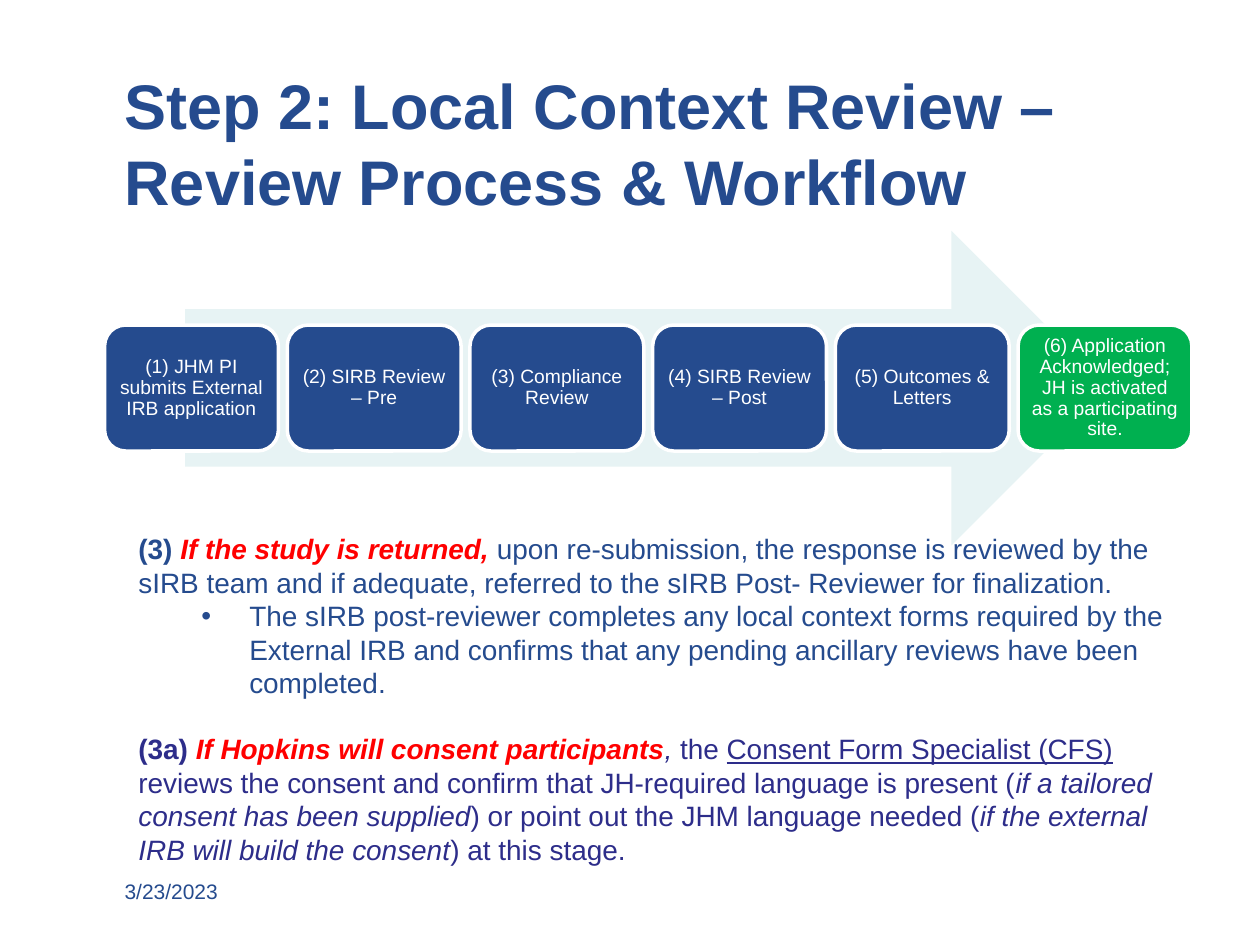
"""Builds the local context review slide with its six-step workflow."""
from typing import NamedTuple

from lxml.etree import SubElement
from pptx import Presentation
from pptx.dml.color import RGBColor
from pptx.enum.shapes import MSO_SHAPE
from pptx.enum.text import MSO_ANCHOR, PP_ALIGN
from pptx.oxml.ns import qn
from pptx.util import Inches, Pt

BLUE, INDIGO, RED, GREEN = "254B8E", "2D2D8A", "FF0000", "00B050"
WHITE, PALE = "FFFFFF", "E7F3F4"
FONT = "Arial"


class Step(NamedTuple):
    """One box of the workflow."""
    text: str
    fill: str = BLUE


class Part(NamedTuple):
    """A stretch of text in one style."""
    text: str
    color: str
    bold: bool = False
    slant: bool = False
    under: bool = False


STEPS = [
    Step("(1) JHM PI submits External IRB application"),
    Step("(2) SIRB Review – Pre"),
    Step("(3) Compliance Review"),
    Step("(4) SIRB Review – Post"),
    Step("(5) Outcomes & Letters"),
    Step("(6) Application Acknowledged; JH is activated as a participating site.", GREEN),
]

RETURN = [
    Part("(3) ", BLUE, bold=True),
    Part("If the study is returned, ", RED, bold=True, slant=True),
    Part("upon re-submission, the response is reviewed by the sIRB team and if "
         "adequate, referred to the sIRB Post- Reviewer for finalization.", BLUE),
]
DETAIL = [
    Part("The sIRB post-reviewer completes any local context forms required by the "
         "External IRB and confirms that any pending ancillary reviews have been "
         "completed.", BLUE),
]
CONSENT = [
    Part("(3a) ", INDIGO, bold=True),
    Part("If Hopkins will consent participants", RED, bold=True, slant=True),
    Part(", ", INDIGO, slant=True),
    Part("the ", INDIGO),
    Part("Consent Form Specialist (CFS) ", INDIGO, under=True),
    Part("reviews the consent and confirm that JH-required language is present (", INDIGO),
    Part("if a tailored consent has been supplied", INDIGO, slant=True),
    Part(") or point out the JHM language needed (", INDIGO),
    Part("if the external IRB will build the consent", INDIGO, slant=True),
    Part(") at this stage.", INDIGO),
]


def tint(color, code: str) -> None:
    """Set a colour from its hex string."""
    color.rgb = RGBColor.from_string(code)


def style(para, size: float, code: str, bold: bool = False) -> None:
    """Set the font of a whole paragraph."""
    font = para.font
    font.name, font.size, font.bold = FONT, Pt(size), bold
    tint(font.color, code)


def add_box(slide, left: float, top: float, width: float, height: float):
    """Add a wrapping text box and return its frame."""
    box = slide.shapes.add_textbox(Inches(left), Inches(top), Inches(width), Inches(height))
    box.text_frame.word_wrap = True
    return box.text_frame


def add_shape(slide, kind, left: float, top: float, width: float, height: float, fill: str):
    """Add a flat filled shape."""
    shape = slide.shapes.add_shape(
        kind, Inches(left), Inches(top), Inches(width), Inches(height))
    shape.shadow.inherit = False
    shape.fill.solid()
    tint(shape.fill.fore_color, fill)
    return shape


def add_step(slide, step: Step, left: float) -> None:
    """Draw one workflow box."""
    shape = add_shape(slide, MSO_SHAPE.ROUNDED_RECTANGLE, left, 2.58, 1.38, 1, step.fill)
    tint(shape.line.color, WHITE)
    shape.line.width = Pt(2)
    frame = shape.text_frame
    frame.word_wrap = True
    frame.vertical_anchor = MSO_ANCHOR.MIDDLE
    frame.margin_left = frame.margin_right = Inches(0.05)
    frame.margin_top = frame.margin_bottom = Inches(0.05)
    frame.text = step.text
    para = frame.paragraphs[0]
    para.alignment = PP_ALIGN.CENTER
    para.line_spacing = 0.9
    style(para, 11, WHITE)


def add_parts(para, parts: list[Part]) -> None:
    """Fill a paragraph with styled runs."""
    para.font.name, para.font.size = FONT, Pt(16)
    for part in parts:
        run = para.add_run()
        run.text = part.text
        font = run.font
        font.bold, font.italic, font.underline = part.bold, part.slant, part.under
        tint(font.color, part.color)


def set_bullet(para, left: float, hang: float) -> None:
    """Give a paragraph a hanging bullet."""
    props = para._p.get_or_add_pPr()
    props.set("marL", str(Inches(left)))
    props.set("indent", str(-Inches(hang)))
    SubElement(props, qn("a:buFont"), typeface=FONT)
    SubElement(props, qn("a:buChar"), char="•")


def main() -> None:
    """Build and save the slide."""
    deck = Presentation()
    deck.slide_width, deck.slide_height = Inches(10), Inches(7.5)
    slide = deck.slides.add_slide(deck.slide_layouts[6])

    title = add_box(slide, 0.89, 0.43, 8.5, 1.25)
    title.margin_top = Inches(0.1)
    title.text = "Step 2: Local Context Review –\vReview Process & Workflow"
    style(title.paragraphs[0], 36, BLUE, bold=True)

    body = add_box(slide, 1, 4.17, 8.45, 3.06)
    add_parts(body.paragraphs[0], RETURN)
    detail = body.add_paragraph()
    detail.level = 1
    set_bullet(detail, 0.88, 0.38)
    add_parts(detail, DETAIL)
    consent = body.add_paragraph()
    consent.space_before = Pt(18.4)
    add_parts(consent, CONSENT)

    arrow = add_shape(slide, MSO_SHAPE.RIGHT_ARROW, 1.47, 1.83, 7.33, 2.5, PALE)
    arrow.line.fill.background()
    for index, step in enumerate(STEPS):
        add_step(slide, step, 0.83 + 1.45 * index)

    date = add_box(slide, 0.89, 6.92, 2.08, 0.33)
    date.text = "3/23/2023"
    style(date.paragraphs[0], 12, BLUE)

    deck.save("out.pptx")


if __name__ == "__main__":
    main()
